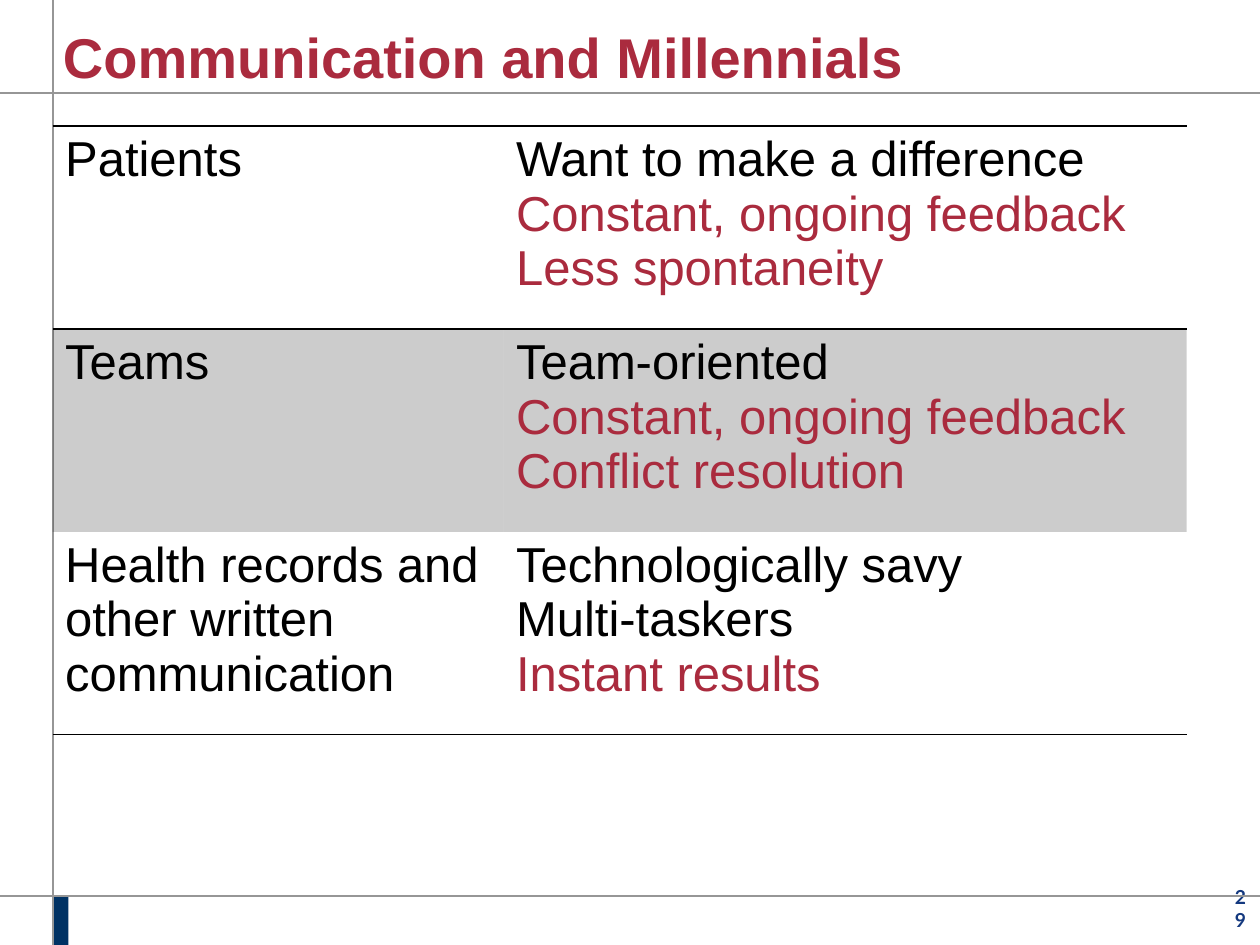
"""Build the slide "Communication and Millennials" with its comparison table."""
import dataclasses

import pptx
import pptx.dml.color
import pptx.enum.shapes
import pptx.enum.text
import pptx.oxml.ns
import pptx.oxml.xmlchemy
import pptx.util

Cm = pptx.util.Cm
Pt = pptx.util.Pt
RGB = pptx.dml.color.RGBColor.from_string
qn = pptx.oxml.ns.qn
OxmlElement = pptx.oxml.xmlchemy.OxmlElement


@dataclasses.dataclass(frozen=True)
class Theme:
    black: str = "000000"
    red: str = "AA2B3E"
    navy: str = "003264"
    blue: str = "14397F"
    gray: str = "969696"
    font: str = "Arial"
    number_font: str = "Lato"
    title_size: int = 32
    body_size: int = 28
    number_size: int = 11


theme = Theme()


def add_run(paragraph, text, size, color, font=theme.font, bold=False):
    run = paragraph.add_run()
    run.text = text
    run.font.size = Pt(size)
    run.font.name = font
    run.font.bold = bold
    run.font.color.rgb = RGB(color)


def add_text_box(left, top, width, height, alignment):
    frame = slide.shapes.add_textbox(Cm(left), Cm(top), Cm(width), Cm(height)).text_frame
    frame.word_wrap = True
    frame.margin_left = frame.margin_right = frame.margin_top = frame.margin_bottom = 0
    frame.vertical_anchor = pptx.enum.text.MSO_ANCHOR.BOTTOM
    frame.paragraphs[0].alignment = alignment
    return frame.paragraphs[0]


presentation = pptx.Presentation()
presentation.slide_width = Cm(25.4)
presentation.slide_height = Cm(19.05)
slide = presentation.slides.add_slide(presentation.slide_layouts[6])

number = add_text_box(24.71, 17.83, 0.41, 0.94, pptx.enum.text.PP_ALIGN.RIGHT)
add_run(number, "29", theme.number_size, theme.blue, theme.number_font, True)

marker = slide.shapes.add_shape(
    pptx.enum.shapes.MSO_SHAPE.RECTANGLE, Cm(1.07), Cm(18.06), Cm(0.31), Cm(0.99))
marker.shadow.inherit = False
marker.fill.solid()
marker.fill.fore_color.rgb = RGB(theme.navy)
marker.line.fill.background()

guides = [(0, 18.06, 25.4, 18.06), (1.07, 19.05, 1.07, 0), (0, 1.88, 25.4, 1.88)]
for guide in guides:
    line = slide.shapes.add_connector(
        pptx.enum.shapes.MSO_CONNECTOR.STRAIGHT, *[Cm(value) for value in guide])
    line.line.color.rgb = RGB(theme.gray)
    line.line.width = Pt(1)
    line._element.spPr.append(OxmlElement("a:effectLst"))

title = add_text_box(1.27, 0.25, 23.67, 1.55, pptx.enum.text.PP_ALIGN.LEFT)
add_run(title, "Communication and Millennials", theme.title_size, theme.red, bold=True)

rows = [
    ("Patients",
     [("Want to make a difference", theme.black),
      ("Constant, ongoing feedback", theme.red),
      ("Less spontaneity", theme.red)],
     ["a:lnT", "a:lnB"], False),
    ("Teams",
     [("Team-oriented", theme.black),
      ("Constant, ongoing feedback", theme.red),
      ("Conflict resolution", theme.red)],
     [], True),
    ("Health records and other written communication",
     [("Technologically savy", theme.black),
      ("Multi-taskers", theme.black),
      ("Instant results", theme.red)],
     ["a:lnB"], False),
]
table = slide.shapes.add_table(
    len(rows), 2, Cm(1.06), Cm(2.54), Cm(22.86), Cm(12.27)).table
table.first_row = table.horz_banding = False
style = table._tbl.tblPr.find(qn("a:tableStyleId"))
style.text = "{2D5ABB26-0587-4C30-8999-92F81FD0307C}"
table.columns[0].width = Cm(9.09)
table.columns[1].width = Cm(13.77)

for row_index, (topic, traits, borders, shaded) in enumerate(rows):
    table.rows[row_index].height = Cm(4.09)
    for column_index, lines in enumerate([[(topic, theme.black)], traits]):
        cell = table.cell(row_index, column_index)
        for line_index, (text, color) in enumerate(lines):
            frame = cell.text_frame
            paragraph = frame.add_paragraph() if line_index else frame.paragraphs[0]
            add_run(paragraph, text, theme.body_size, color)
        properties = cell._tc.get_or_add_tcPr()
        for border in borders:
            edge = OxmlElement(border)
            edge.set("w", str(Pt(1)))
            fill = OxmlElement("a:solidFill")
            ink = OxmlElement("a:srgbClr")
            ink.set("val", theme.black)
            fill.append(ink)
            edge.append(fill)
            properties.append(edge)
        if shaded:
            cell.fill.solid()
            cell.fill.fore_color.rgb = RGB(theme.black)
            alpha = OxmlElement("a:alpha")
            alpha.set("val", "20000")
            properties.find(qn("a:solidFill"))[0].append(alpha)
        else:
            cell.fill.background()

presentation.save("out.pptx")
